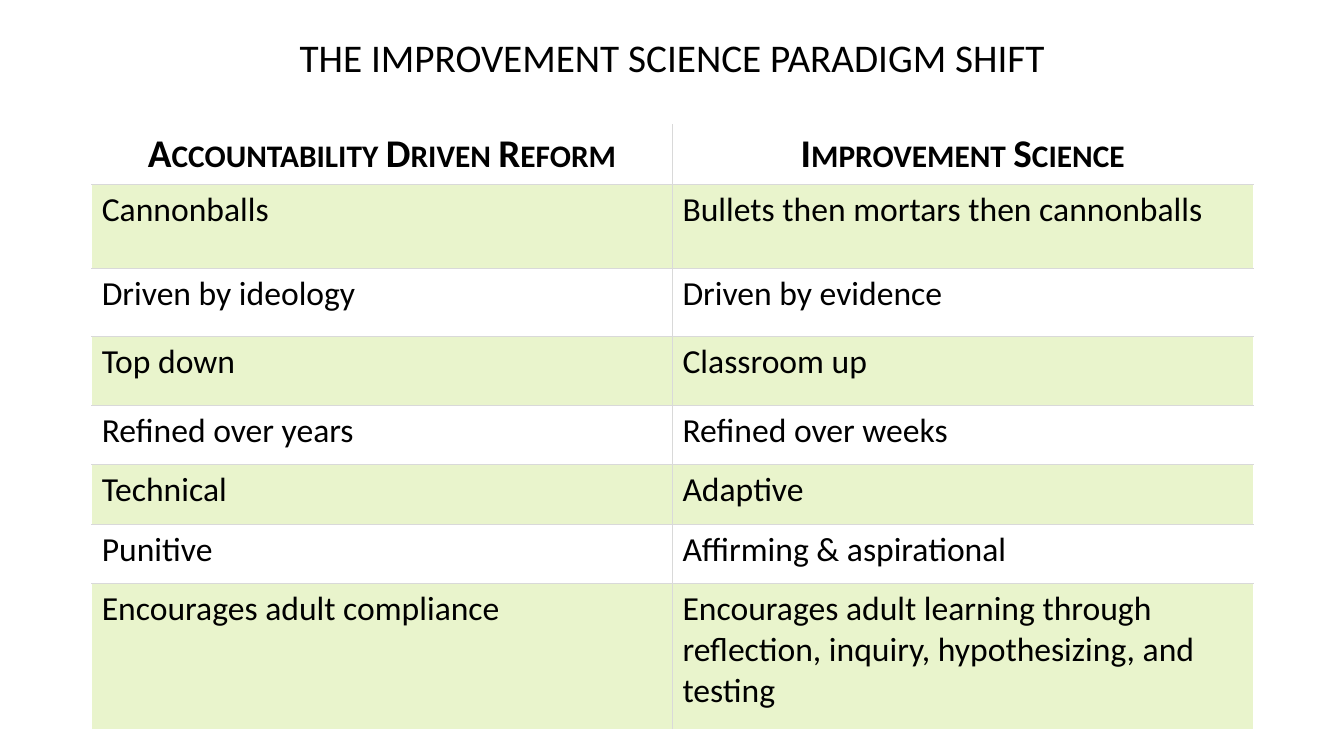
"""Build a slide that compares accountability driven reform with improvement science."""
from lxml import etree
from pptx import Presentation, util as u
from pptx.dml.color import RGBColor
from pptx.enum import text
from pptx.oxml import ns

HUES = {"ink": "000000", "rule": "D9D9D9", "band": "91CA00"}
HEAD = {"size": u.Pt(28), "bold": True, "name": "Calibri"}
BODY = {"size": u.Pt(24), "bold": False, "name": "Calibri"}
TITLE = {"size": u.Pt(28), "bold": False, "name": "Calibri"}
ROWS = [
    (0.59, "Accountability Driven Reform", "Improvement Science"),
    (0.83, "Cannonballs", "Bullets then mortars then cannonballs"),
    (0.68, "Driven by ideology", "Driven by evidence"),
    (0.68, "Top down", "Classroom up"),
    (0.59, "Refined over years", "Refined over weeks"),
    (0.59, "Technical", "Adaptive"),
    (0.59, "Punitive", "Affirming & aspirational"),
    (1.45, "Encourages adult compliance",
     "Encourages adult learning through reflection, inquiry, hypothesizing, and testing"),
]


def write(para, words, style, align):
    para.alignment = align
    run = para.add_run()
    run.text = words
    for key, value in style.items():
        setattr(run.font, key, value)
    run.font.color.rgb = RGBColor.from_string(HUES["ink"])
    return run


def rule(cell, side):
    line = etree.SubElement(cell._tc.get_or_add_tcPr(), ns.qn(f"a:ln{side}"), w=str(u.Pt(0.5)))
    fill = etree.SubElement(line, ns.qn("a:solidFill"))
    etree.SubElement(fill, ns.qn("a:srgbClr"), val=HUES["rule"])


deck = Presentation()
deck.slide_width, deck.slide_height = u.Inches(13.33), u.Inches(7.5)
slide = deck.slides.add_slide(deck.slide_layouts[6])

box = slide.shapes.add_textbox(0, u.Inches(0.21), u.Inches(13.33), u.Inches(0.64))
frame = box.text_frame
frame.word_wrap = True
frame.vertical_anchor = text.MSO_ANCHOR.BOTTOM
frame.paragraphs[0].line_spacing = 0.9
write(frame.paragraphs[0], "THE IMPROVEMENT SCIENCE PARADIGM SHIFT", TITLE, text.PP_ALIGN.CENTER)

high = sum(row[0] for row in ROWS)
grid = slide.shapes.add_table(
    len(ROWS), 2, u.Inches(0.91), u.Inches(1.24), u.Inches(11.52), u.Inches(high)).table
grid.first_row = grid.horz_banding = False
for r, (tall, *pair) in enumerate(ROWS):
    grid.rows[r].height = u.Inches(tall)
    for c, words in enumerate(pair):
        cell = grid.cell(r, c)
        rule(cell, "L" if c else "R")
        if r > 0:
            rule(cell, "T")
        if r < len(ROWS) - 1:
            rule(cell, "B")
        if r % 2:
            cell.fill.solid()
            cell.fill.fore_color.rgb = RGBColor.from_string(HUES["band"])
            tint = cell._tc.tcPr.find(f"{ns.qn('a:solidFill')}/{ns.qn('a:srgbClr')}")
            etree.SubElement(tint, ns.qn("a:alpha"), val="20000")
        else:
            cell.fill.background()
        para = cell.text_frame.paragraphs[0]
        if r:
            write(para, words, BODY, text.PP_ALIGN.LEFT)
        else:
            run = write(para, words, HEAD, text.PP_ALIGN.CENTER)
            run._r.get_or_add_rPr().set("cap", "small")

deck.save("out.pptx")
